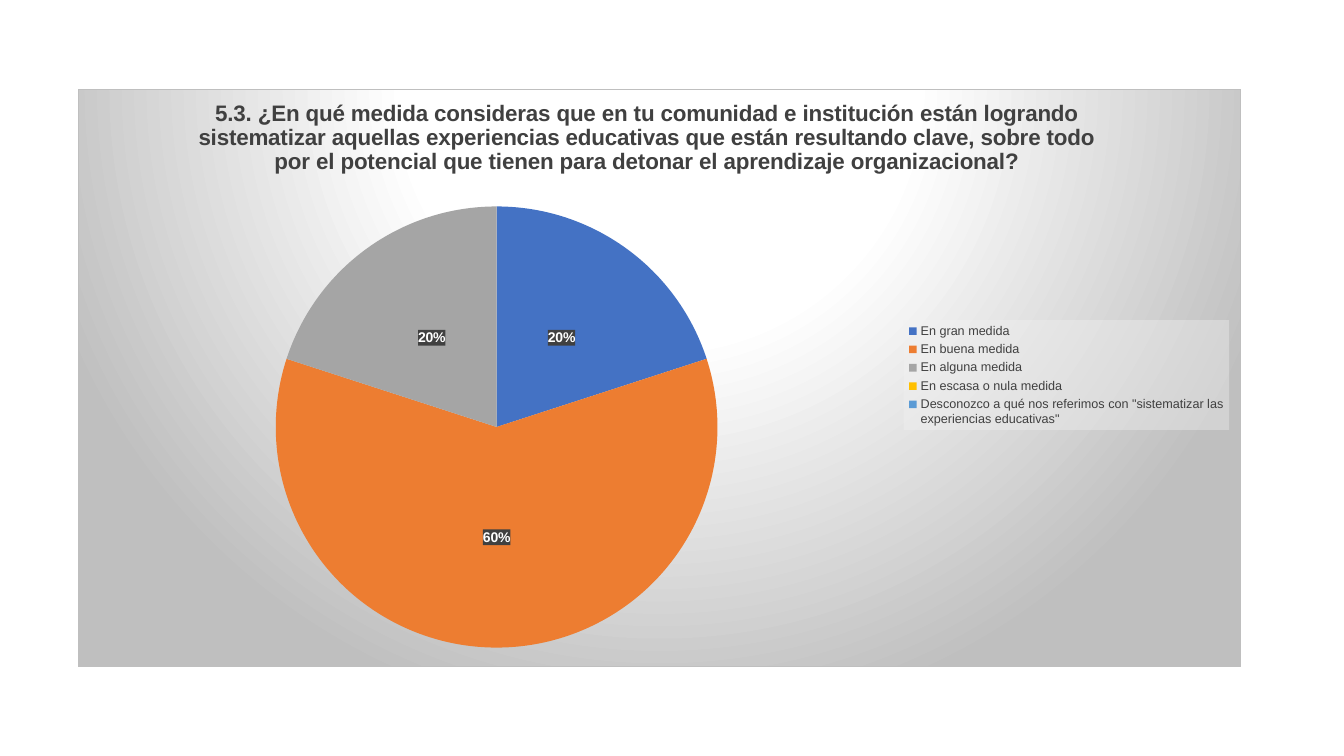
from lxml.etree import fromstring
from pptx import Presentation
from pptx.chart.data import CategoryChartData
from pptx.dml.color import RGBColor
from pptx.enum.chart import XL_CHART_TYPE, XL_LABEL_POSITION, XL_LEGEND_POSITION
from pptx.oxml.ns import nsdecls, qn
from pptx.util import Inches, Pt

BLACK = RGBColor(0x00, 0x00, 0x00)
WHITE = RGBColor(0xFF, 0xFF, 0xFF)
DARK = RGBColor(0x40, 0x40, 0x40)
PALE = RGBColor(0xF2, 0xF2, 0xF2)
SILVER = RGBColor(0xBF, 0xBF, 0xBF)
BLUE = RGBColor(0x44, 0x72, 0xC4)
ORANGE = RGBColor(0xED, 0x7D, 0x31)
GRAY = RGBColor(0xA5, 0xA5, 0xA5)
GOLD = RGBColor(0xFF, 0xC0, 0x00)
SKY = RGBColor(0x5B, 0x9B, 0xD5)

QUESTION = (
    "5.3. ¿En qué medida consideras que en tu comunidad e institución están logrando "
    "sistematizar aquellas experiencias educativas que están resultando clave, sobre todo "
    "por el potencial que tienen para detonar el aprendizaje organizacional?"
)
ANSWERS = [
    ("En gran medida", 20, BLUE),
    ("En buena medida", 60, ORANGE),
    ("En alguna medida", 20, GRAY),
    ("En escasa o nula medida", 0, GOLD),
    ('Desconozco a qué nos referimos con "sistematizar las experiencias educativas"', 0, SKY),
]


def set_format(target, values):
    """Set each named attribute of the target."""
    for name, value in values.items():
        setattr(target, name, value)


def set_font(font, size, color, bold=False):
    """Give a chart text its typeface, size, weight and colour."""
    set_format(font, {"name": "Arial", "size": Pt(size), "bold": bold})
    font.color.rgb = color


def chart_element(tag, content):
    """Return a chart XML element with the given content."""
    return fromstring(f"<c:{tag} {nsdecls('c', 'a')}>{content}</c:{tag}>")


def sheer_fill(color, percent):
    """Return shape properties with a partly transparent fill."""
    return chart_element(
        "spPr",
        f'<a:solidFill><a:srgbClr val="{color}"><a:alpha val="{percent * 1000}"/>'
        "</a:srgbClr></a:solidFill>",
    )


def place(parent, index, **fractions):
    """Position a chart part by fractions of the chart size."""
    for layout in parent.findall(qn("c:layout")):
        parent.remove(layout)
    target = '<c:layoutTarget val="inner"/>' if parent.tag == qn("c:plotArea") else ""
    modes = "".join(f'<c:{axis}Mode val="edge"/>' for axis in "xy")
    sizes = "".join(f'<c:{name} val="{value}"/>' for name, value in fractions.items())
    content = f"<c:manualLayout>{target}{modes}{sizes}</c:manualLayout>"
    parent.insert(index, chart_element("layout", content))


def add_pie(page):
    """Add the pie of answers and return its chart."""
    data = CategoryChartData()
    data.categories = [answer for answer, _, _ in ANSWERS]
    data.add_series("Series 1", [value for _, value, _ in ANSWERS])
    frame = page.shapes.add_chart(
        XL_CHART_TYPE.PIE, Inches(0.77), Inches(0.88), Inches(11.54), Inches(5.74), data
    )
    chart = frame.chart
    set_font(chart.font, 10, BLACK)
    for index, (_, _, color) in enumerate(ANSWERS):
        fill = chart.plots[0].series[0].points[index].format.fill
        fill.solid()
        fill.fore_color.rgb = color
    place(chart.element.find(f".//{qn('c:plotArea')}"), 0, x=0.17, y=0.2, w=0.38, h=0.77)
    return chart


def paint_background(chart):
    """Give the chart area a radial gradient and a thin border."""
    stops = "".join(
        f'<a:gs pos="{position * 1000}"><a:srgbClr val="{color}"/></a:gs>'
        for position, color in [(0, WHITE), (39, WHITE), (100, SILVER)]
    )
    area = chart_element(
        "spPr",
        f'<a:gradFill><a:gsLst>{stops}</a:gsLst><a:path path="circle">'
        '<a:fillToRect l="50000" t="-80000" r="50000" b="180000"/></a:path></a:gradFill>'
        f'<a:ln w="{Pt(0.75)}"><a:solidFill><a:srgbClr val="{SILVER}"/></a:solidFill></a:ln>',
    )
    chart.element.find(qn("c:chart")).addnext(area)


def add_title(chart):
    """Write the question above the pie."""
    frame = chart.chart_title.text_frame
    frame.text = QUESTION
    set_font(frame.paragraphs[0].runs[0].font, 16, DARK, True)
    place(chart.element.find(f".//{qn('c:title')}"), 1, x=0.1, y=0.01)


def add_legend(chart):
    """Show the answers at the right on a pale panel."""
    chart.has_legend = True
    set_format(chart.legend, {"position": XL_LEGEND_POSITION.RIGHT, "include_in_layout": False})
    set_font(chart.legend.font, 9, DARK)
    legend = chart.element.find(f".//{qn('c:legend')}")
    place(legend, 1, x=0.71, y=0.4, w=0.28, h=0.19)
    legend.find(qn("c:txPr")).addprevious(sheer_fill(PALE, 39))


def add_labels(chart):
    """Label each visible slice with its percentage."""
    labels = chart.plots[0].series[0].data_labels
    set_format(labels, {
        "show_percentage": True, "show_value": False, "show_legend_key": False,
        "show_category_name": False, "show_series_name": False,
        "position": XL_LABEL_POSITION.CENTER,
    })
    set_font(labels.font, 10, WHITE, True)
    element = chart.element.find(f".//{qn('c:ser')}/{qn('c:dLbls')}")
    element.find(qn("c:txPr")).addprevious(sheer_fill(DARK, 90))
    empty = [index for index, (_, value, _) in enumerate(ANSWERS) if value == 0]
    for order, index in enumerate(empty):
        hidden = chart_element("dLbl", f'<c:idx val="{index}"/><c:delete val="1"/>')
        element.insert(order, hidden)


def main():
    """Build the slide and save it."""
    deck = Presentation()
    set_format(deck, {"slide_width": Inches(13.33), "slide_height": Inches(7.5)})
    page = deck.slides.add_slide(deck.slide_layouts[6])
    chart = add_pie(page)
    paint_background(chart)
    add_title(chart)
    add_legend(chart)
    add_labels(chart)
    deck.save("out.pptx")


if __name__ == "__main__":
    main()
